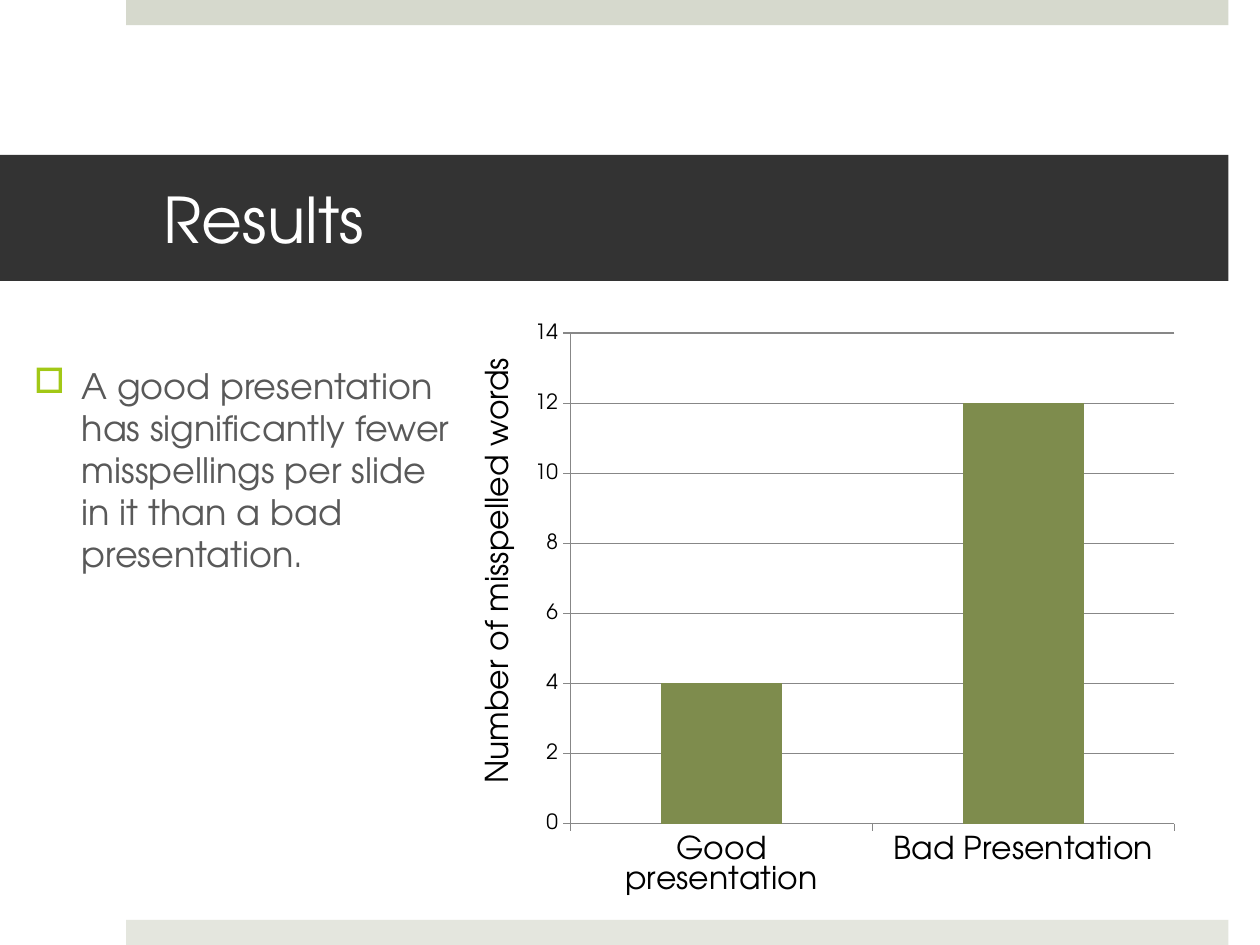
from dataclasses import dataclass

from lxml.etree import SubElement
from pptx import Presentation
from pptx.chart.data import CategoryChartData
from pptx.dml.color import RGBColor
from pptx.enum.chart import XL_CHART_TYPE, XL_TICK_MARK
from pptx.enum.shapes import MSO_SHAPE
from pptx.enum.text import MSO_ANCHOR, PP_ALIGN
from pptx.oxml import parse_xml
from pptx.oxml.ns import nsdecls, qn
from pptx.util import Inches, Pt

WIDTH, HEIGHT = 10, 7.5
BAND_LEFT, BAND_RIGHT, BAND_HEIGHT = 1, 9.75, 0.2


@dataclass(frozen=True)
class Theme:
    font: str = "TeX Gyre Adventor"
    title_size: int = 36
    body_size: int = 20
    label_size: int = 18
    tick_size: int = 12
    top_band: str = "D6D9CD"
    bottom_band: str = "E4E6DE"
    title_fill: str = "333333"
    title_text: str = "FFFFFF"
    body_text: str = "595959"
    bullet: str = "A2C816"
    label_text: str = "000000"
    column: str = "7E8C4D"
    grid: str = "878787"


THEME = Theme()


def color(value):
    return RGBColor.from_string(value)


def style_font(font, size, text_color):
    font.name = THEME.font
    font.size = Pt(size)
    font.bold = False
    font.color.rgb = color(text_color)


def write(frame, text, size, text_color):
    frame.text = text
    para = frame.paragraphs[0]
    style_font(para.runs[0].font, size, text_color)
    return para


def add_band(page, top, fill):
    band = page.shapes.add_shape(
        MSO_SHAPE.RECTANGLE, Inches(BAND_LEFT), Inches(top),
        Inches(BAND_RIGHT - BAND_LEFT), Inches(BAND_HEIGHT))
    band.shadow.inherit = False
    band.fill.solid()
    band.fill.fore_color.rgb = color(fill)
    band.line.fill.background()


def set_title(page, text):
    title = page.shapes.title
    title.left, title.top = Inches(0), Inches(1.23)
    title.width, title.height = Inches(BAND_RIGHT), Inches(1)
    title.fill.solid()
    title.fill.fore_color.rgb = color(THEME.title_fill)
    frame = title.text_frame
    frame.margin_left, frame.margin_right = Inches(1.3), Inches(0.3)
    frame.vertical_anchor = MSO_ANCHOR.MIDDLE
    para = write(frame, text, THEME.title_size, THEME.title_text)
    para.alignment = PP_ALIGN.LEFT


def add_bullet_text(page, text, left, top, width, height):
    box = page.shapes.add_textbox(
        Inches(left), Inches(top), Inches(width), Inches(height))
    box.text_frame.word_wrap = True
    para = write(box.text_frame, text, THEME.body_size, THEME.body_text)
    para.space_before = Pt(20)
    # Hanging bullet
    properties = para._p.get_or_add_pPr()
    indent = Inches(0.38)
    properties.set("marL", str(indent))
    properties.set("indent", str(-indent))
    bullet_color = SubElement(properties, qn("a:buClr"))
    SubElement(bullet_color, qn("a:srgbClr"), val=THEME.bullet)
    SubElement(properties, qn("a:buChar"), char="□")


def add_rotated_label(page, text, left, top, width, height):
    box = page.shapes.add_textbox(
        Inches(left), Inches(top), Inches(width), Inches(height))
    box.rotation = 270
    box.text_frame.word_wrap = False
    write(box.text_frame, text, THEME.label_size, THEME.label_text)


def style_line(line):
    line.color.rgb = color(THEME.grid)
    line.width = Pt(0.75)


def set_plot_area(chart, left, top, width, height):
    plot_area = chart._chartSpace.chart.plotArea
    for old in plot_area.findall(qn("c:layout")):
        plot_area.remove(old)
    plot_area.insert(0, parse_xml(
        f'<c:layout {nsdecls("c")}><c:manualLayout>'
        '<c:layoutTarget val="inner"/><c:xMode val="edge"/><c:yMode val="edge"/>'
        f'<c:x val="{left}"/><c:y val="{top}"/>'
        f'<c:w val="{width}"/><c:h val="{height}"/>'
        '</c:manualLayout></c:layout>'))


def add_column_chart(page, values, left, top, width, height):
    data = CategoryChartData()
    data.categories = list(values)
    data.add_series("Series 1", list(values.values()))
    chart = page.shapes.add_chart(
        XL_CHART_TYPE.COLUMN_CLUSTERED, Inches(left), Inches(top),
        Inches(width), Inches(height), data).chart
    chart.has_legend = False
    chart.has_title = False
    style_font(chart.font, THEME.label_size, THEME.label_text)
    set_plot_area(chart, 0.097, 0.03, 0.791, 0.811)

    # Columns
    plot = chart.plots[0]
    plot.gap_width = 150
    plot.vary_by_categories = False
    fill = plot.series[0].format.fill
    fill.solid()
    fill.fore_color.rgb = color(THEME.column)

    # Axes
    for axis in (chart.category_axis, chart.value_axis):
        axis.major_tick_mark = XL_TICK_MARK.OUTSIDE
        axis.minor_tick_mark = XL_TICK_MARK.NONE
        style_line(axis.format.line)
    scale = chart.value_axis
    scale.minimum_scale, scale.maximum_scale, scale.major_unit = 0, 14, 2
    scale.has_major_gridlines = True
    style_line(scale.major_gridlines.format.line)
    style_font(scale.tick_labels.font, THEME.tick_size, THEME.label_text)


def main():
    deck = Presentation()
    deck.slide_width, deck.slide_height = Inches(WIDTH), Inches(HEIGHT)
    page = deck.slides.add_slide(deck.slide_layouts[5])

    # Frame and heading
    add_band(page, 0, THEME.top_band)
    add_band(page, HEIGHT - BAND_HEIGHT, THEME.bottom_band)
    set_title(page, "Results")

    # Finding beside its chart
    add_bullet_text(
        page, "A good presentation has significantly fewer misspellings "
        "per slide in it than a bad presentation.", 0.17, 2.84, 3.5, 4.01)
    add_column_chart(
        page, {"Good presentation": 4, "Bad Presentation": 12},
        3.94, 2.5, 6.06, 4.8)
    add_rotated_label(
        page, "Number of misspelled words", 2.13, 4.31, 3.62, 0.4)

    deck.save("out.pptx")


if __name__ == "__main__":
    main()
